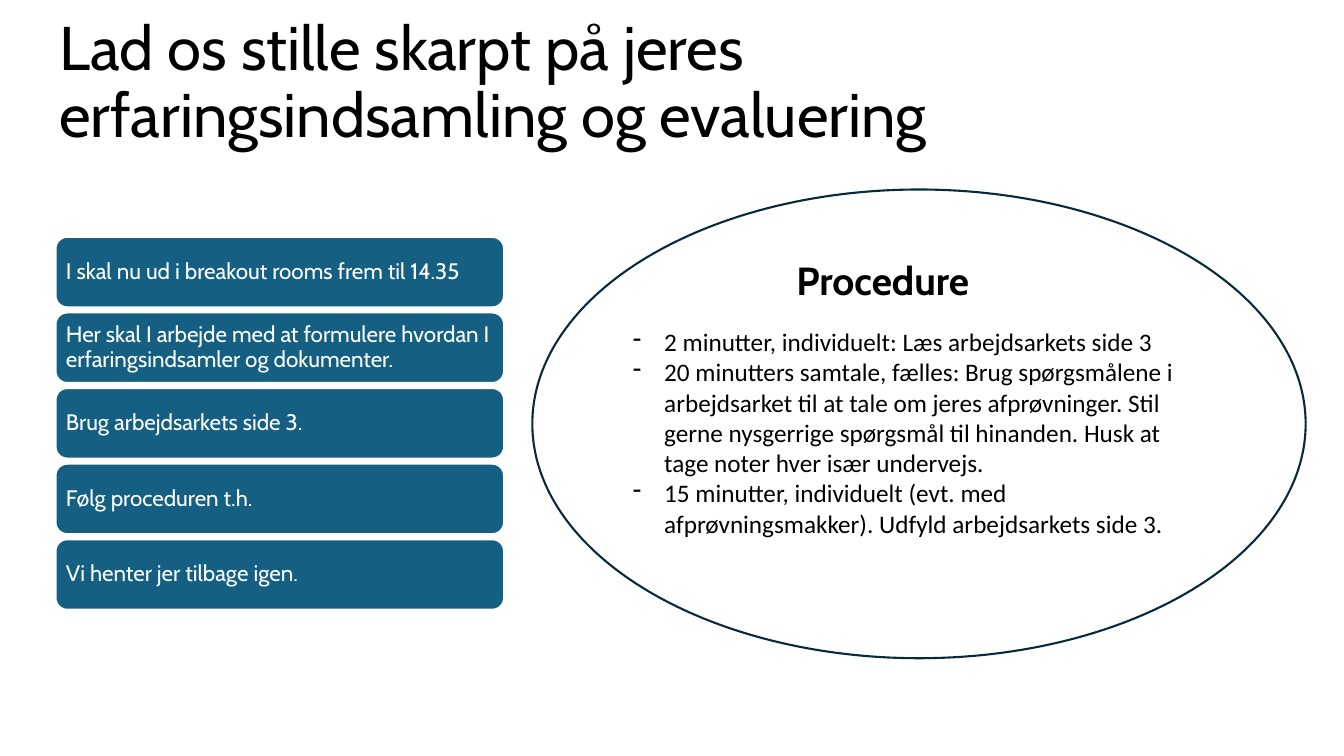
from lxml.etree import SubElement
from pptx import Presentation
from pptx.dml.color import RGBColor
from pptx.enum.shapes import MSO_SHAPE as Shape
from pptx.enum.text import MSO_ANCHOR as Anchor, PP_ALIGN as Align
from pptx.oxml.ns import qn
from pptx.util import Inches, Pt

TITLE = "Lad os stille skarpt på jeres erfaringsindsamling og evaluering"
STEPS = [
    "I skal nu ud i breakout rooms frem til 14.35",
    "Her skal I arbejde med at formulere hvordan I erfaringsindsamler og dokumenter.",
    "Brug arbejdsarkets side 3.",
    "Følg proceduren t.h.",
    "Vi henter jer tilbage igen.",
]
HEADING = "Procedure"
PROCEDURE = [
    "2 minutter, individuelt: Læs arbejdsarkets side 3",
    "20 minutters samtale, fælles: Brug spørgsmålene i arbejdsarket til at tale om "
    "jeres afprøvninger. Stil gerne nysgerrige spørgsmål til hinanden. Husk at tage "
    "noter hver især undervejs.",
    "15 minutter, individuelt (evt. med afprøvningsmakker). Udfyld arbejdsarkets side 3.",
]

BLACK = RGBColor(0x00, 0x00, 0x00)
WHITE = RGBColor(0xFF, 0xFF, 0xFF)
BLUE = RGBColor(0x15, 0x60, 0x82)
NAVY = RGBColor(0x09, 0x2A, 0x39)

STEP_TOP, STEP_PITCH = 2.35, 0.75
BULLET_INDENT = Inches(0.31)

deck = Presentation()
deck.slide_width, deck.slide_height = Inches(13.33), Inches(7.5)
page = deck.slides.add_slide(deck.slide_layouts[6])


def write(box, lines, size, font="Cabin", color=BLACK, bold=False, spacing=1.0):
    frame = box.text_frame
    frame.word_wrap = True
    frame.text = "\n".join(lines)
    for para in frame.paragraphs:
        para.alignment = Align.LEFT
        para.line_spacing = spacing
        para.font.name, para.font.size = font, Pt(size)
        para.font.bold, para.font.color.rgb = bold, color
    return frame


def add_text(left, top, width, height, lines, size, **style):
    box = page.shapes.add_textbox(*map(Inches, (left, top, width, height)))
    return write(box, lines, size, **style)


def add_outlined(kind, left, top, width, height, line):
    shape = page.shapes.add_shape(kind, *map(Inches, (left, top, width, height)))
    shape.shadow.inherit = False
    shape.line.color.rgb, shape.line.width = line, Pt(1.5)
    return shape


title = add_text(0.49, 0.11, 11.5, 1.45, [TITLE], 44, spacing=0.9)
title.vertical_anchor = Anchor.MIDDLE

for index, step in enumerate(STEPS):
    card = add_outlined(Shape.ROUNDED_RECTANGLE, 0.55, STEP_TOP + index * STEP_PITCH,
                        4.45, 0.7, WHITE)
    card.fill.solid()
    card.fill.fore_color.rgb = BLUE
    frame = write(card, [step], 16, color=WHITE, spacing=0.9)
    frame.vertical_anchor = Anchor.MIDDLE
    frame.margin_left = frame.margin_right = Inches(0.07)
    frame.margin_top = frame.margin_bottom = Inches(0.07)

add_outlined(Shape.OVAL, 5.28, 1.88, 7.67, 4.65, NAVY).fill.background()
add_text(7.8, 2.49, 4.09, 0.57, [HEADING], 28, bold=True)

procedure = add_text(6.18, 3.19, 5.87, 2.22, PROCEDURE, 18, font="Calibri")
for para in procedure.paragraphs:
    properties = para._p.get_or_add_pPr()
    properties.set("marL", str(BULLET_INDENT))
    properties.set("indent", str(-BULLET_INDENT))
    bullet = SubElement(properties, qn("a:buChar"), char="-")
    properties.find(qn("a:defRPr")).addprevious(bullet)

deck.save("out.pptx")
